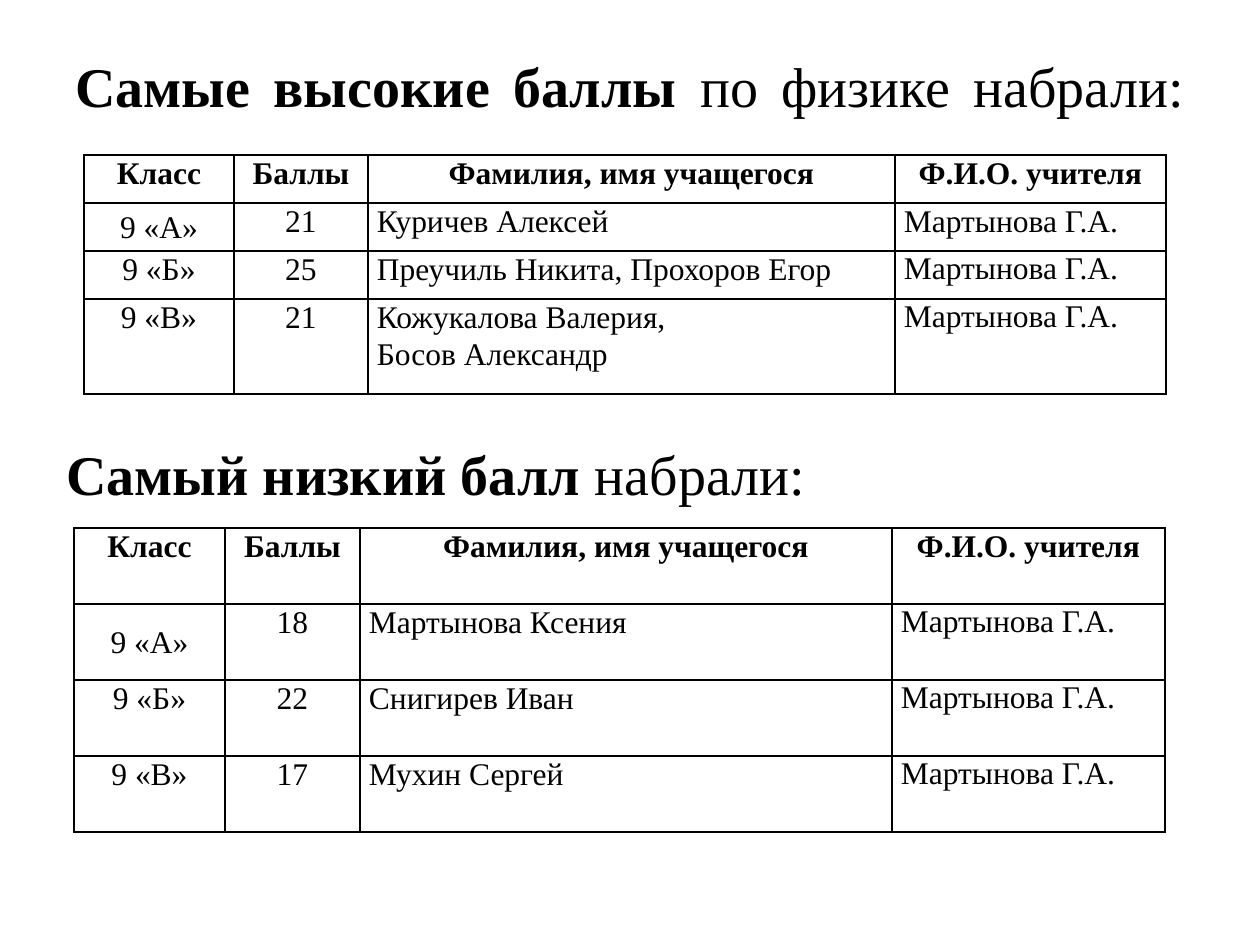
"""Build the slide with the highest and lowest physics scores by class."""
from lxml import etree
from pptx import Presentation
from pptx import util as u
from pptx.dml.color import RGBColor
from pptx.enum import text
from pptx.oxml import ns

PX = 914400 / 126
THEME = {"font": "Times New Roman", "ink": "000000", "heading": 32, "body": 18, "border": 1}
ALIGN, ANCHOR = text.PP_ALIGN, text.MSO_ANCHOR
COLUMN_ALIGN = (ALIGN.CENTER, ALIGN.CENTER, ALIGN.JUSTIFY, ALIGN.LEFT)
HEADER = ("Класс", "Баллы", "Фамилия, имя учащегося", "Ф.И.О. учителя")
TEACHER = "Мартынова Г.А."

HEADINGS = [
    {"box": (63, 38, 1134, 158), "bold": "Самые высокие баллы ", "plain": "по физике набрали:",
     "stretch": True, "frame": {"word_wrap": True, "margin_top": 14}},
    {"box": (54, 433, 771, 81), "bold": "Самый низкий балл", "plain": " набрали:",
     "stretch": False, "frame": {"word_wrap": False, "auto_size": text.MSO_AUTO_SIZE.SHAPE_TO_FIT_TEXT}},
]
TABLES = [
    {"at": (84, 155), "columns": (150, 134, 527, 271), "rows": (48, 48, 48, 95), "tight_from": 2,
     "scores": [("9 «А»", "21", "Куричев Алексей"),
                ("9 «Б»", "25", "Преучиль Никита, Прохоров Егор"),
                ("9 «В»", "21", "Кожукалова Валерия,\nБосов Александр")]},
    {"at": (74, 528), "columns": (151, 135, 532, 273), "rows": (76, 76, 76, 76), "tight_from": 1,
     "scores": [("9 «А»", "18", "Мартынова Ксения"),
                ("9 «Б»", "22", "Снигирев Иван"),
                ("9 «В»", "17", "Мухин Сергей")]},
]


def px(length):
    return u.Emu(round(length * PX))


def apply(target, values):
    for name, value in values.items():
        setattr(target, name, px(value) if name.startswith("margin") else value)


def style(run, size, bold):
    apply(run.font, {"name": THEME["font"], "size": u.Pt(size), "bold": bold})
    run.font.color.rgb = RGBColor.from_string(THEME["ink"])


def add_heading(slide, heading):
    frame = slide.shapes.add_textbox(*map(px, heading["box"])).text_frame
    apply(frame, heading["frame"])
    paragraph = frame.paragraphs[0]
    paragraph.alignment = ALIGN.JUSTIFY
    for part in ("bold", "plain"):
        run = paragraph.add_run()
        run.text = heading[part]
        style(run, THEME["heading"], part == "bold")
    if heading["stretch"]:
        paragraph.add_line_break()


def add_borders(cell):
    properties = cell._tc.get_or_add_tcPr()
    for position, side in enumerate(("lnL", "lnR", "lnT", "lnB")):
        line = etree.Element(ns.qn(f"a:{side}"), w=str(u.Pt(THEME["border"])))
        fill = etree.SubElement(line, ns.qn("a:solidFill"))
        etree.SubElement(fill, ns.qn("a:srgbClr"), val=THEME["ink"])
        properties.insert(position, line)


def fill_cell(cell, content, row, column, tight_from):
    cell.fill.background()
    class_name = row == 1 and column == 0
    apply(cell, {"margin_left": 9, "margin_right": 9, "margin_top": 0, "margin_bottom": 0,
                 "vertical_anchor": ANCHOR.MIDDLE if class_name else ANCHOR.TOP})
    cell.text_frame.text = content
    tight = column == 3 and row >= tight_from
    for paragraph in cell.text_frame.paragraphs:
        apply(paragraph, {"alignment": ALIGN.CENTER if row == 0 else COLUMN_ALIGN[column],
                          "line_spacing": 1.0 if tight else 1.05})
        for run in paragraph.runs:
            style(run, THEME["body"], row == 0)
    add_borders(cell)


def add_score_table(slide, data):
    rows = [HEADER] + [(*score, TEACHER) for score in data["scores"]]
    size = (sum(data["columns"]), sum(data["rows"]))
    table = slide.shapes.add_table(len(rows), len(HEADER), *map(px, data["at"] + size)).table
    apply(table, {"first_row": False, "horz_banding": False})
    for column, width in zip(table.columns, data["columns"]):
        column.width = px(width)
    for row, height in zip(table.rows, data["rows"]):
        row.height = px(height)
    for row, contents in enumerate(rows):
        for column, content in enumerate(contents):
            fill_cell(table.cell(row, column), content, row, column, data["tight_from"])


def main():
    presentation = Presentation()
    apply(presentation, {"slide_width": px(1260), "slide_height": px(945)})
    slide = presentation.slides.add_slide(presentation.slide_layouts[6])
    for heading, data in zip(HEADINGS, TABLES):
        add_heading(slide, heading)
        add_score_table(slide, data)
    presentation.save("out.pptx")


if __name__ == "__main__":
    main()
